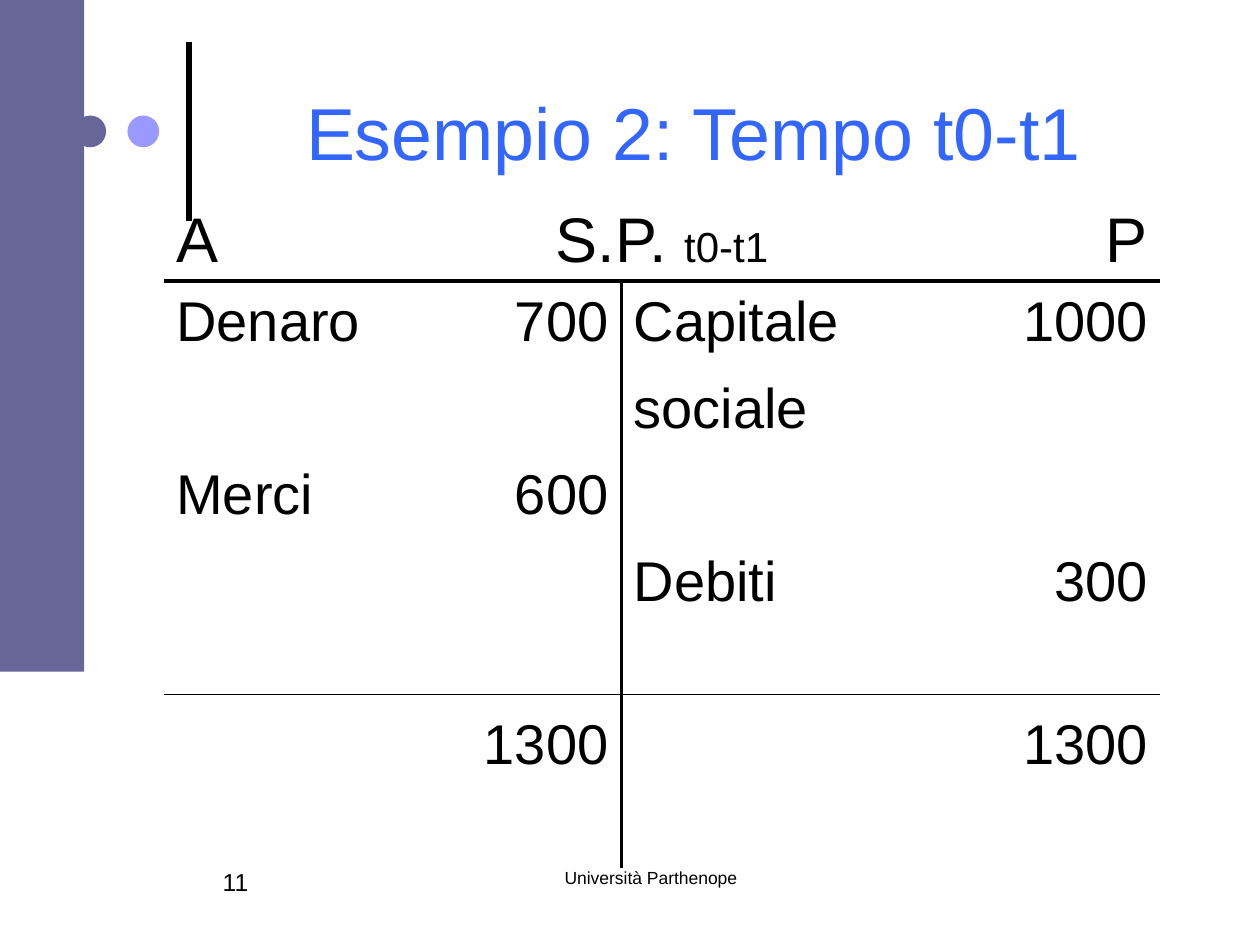
from lxml.etree import SubElement
from pptx import Presentation
from pptx.dml.color import RGBColor
from pptx.enum.shapes import MSO_CONNECTOR, MSO_SHAPE
from pptx.enum.text import MSO_ANCHOR, PP_ALIGN
from pptx.oxml.ns import qn
from pptx.util import Cm, Pt

COLUMNS = [5.03, 4.19, 5.84, 5.03]
ROWS = [1.65, 1.53, 1.75, 1.75, 1.75, 1.53, 1.75, 1.75]
ACCOUNTS = [
    ["A", "S.P. ", "", "P"],
    ["Denaro", "700", "Capitale", "1000"],
    ["", "", "sociale", ""],
    ["Merci", "600", "", ""],
    ["", "", "Debiti", "300"],
    ["", "", "", ""],
    ["", "1300", "", "1300"],
    ["", "", "", ""],
]
RULES = {0: 2, 5: 1}


def colour(value):
    """Turn a hex string into a colour."""
    return RGBColor.from_string(value)


def apply(target, formats):
    """Set every attribute named in the dict."""
    for name, value in formats.items():
        setattr(target, name, value)


def add_span(para, text, size, ink="000000"):
    """Add one formatted run to a paragraph."""
    span = para.add_run()
    span.text = text
    apply(span.font, {"name": "Arial", "size": Pt(size), "bold": False})
    span.font.color.rgb = colour(ink)


def add_text(page, box, text, size, ink="000000", align=PP_ALIGN.LEFT, anchor=MSO_ANCHOR.TOP):
    """Place a wrapped line of text in the box."""
    frame = page.shapes.add_textbox(*map(Cm, box)).text_frame
    apply(frame, {"word_wrap": True, "vertical_anchor": anchor})
    frame.paragraphs[0].alignment = align
    add_span(frame.paragraphs[0], text, size, ink)


def add_solid(page, kind, box, fill):
    """Place a plain filled shape without outline."""
    shape = page.shapes.add_shape(kind, *map(Cm, box))
    shape.shadow.inherit = False
    shape.fill.solid()
    shape.fill.fore_color.rgb = colour(fill)
    shape.line.fill.background()


def add_decoration(page, box):
    """Draw the upright line, the two dots and the side band."""
    left, top, width, height = box
    line_left = left + 3.81
    line = page.shapes.add_connector(
        MSO_CONNECTOR.STRAIGHT, Cm(line_left), Cm(top + 4.45), Cm(line_left), Cm(top + 0.84))
    line.line.width = Pt(3)
    line.line.color.rgb = colour("000000")
    SubElement(line._element.spPr, qn("a:effectLst"))
    for offset, fill in ((1.5, "666699"), (2.57, "9999FF")):
        add_solid(page, MSO_SHAPE.OVAL, (left + offset, top + 2.33, 0.64, 0.64), fill)
    add_solid(page, MSO_SHAPE.RECTANGLE, (left, top, width, height), "666699")


def set_borders(cell, widths):
    """Draw the given cell sides in black and clear the others."""
    properties = cell._tc.get_or_add_tcPr()
    for side in "LRTB":
        border = SubElement(properties, qn(f"a:ln{side}"))
        if side in widths:
            border.set("w", str(Pt(widths[side])))
            fill = SubElement(border, qn("a:solidFill"))
            SubElement(fill, qn("a:srgbClr")).set("val", "000000")
        else:
            SubElement(border, qn("a:noFill"))


def cell_borders(row, column):
    """Work out the ruled sides of a cell in the T account."""
    widths = {}
    if row in RULES:
        widths["B"] = RULES[row]
    if row - 1 in RULES:
        widths["T"] = RULES[row - 1]
    if row > 0 and column in (1, 2):
        widths["R" if column == 1 else "L"] = 2
    return widths


def add_account(page, box):
    """Build the T account table in the box."""
    table = page.shapes.add_table(len(ROWS), len(COLUMNS), *map(Cm, box)).table
    apply(table, {"first_row": False, "horz_banding": False})
    for column, width in zip(table.columns, COLUMNS):
        column.width = Cm(width)
    for row, height in zip(table.rows, ROWS):
        row.height = Cm(height)
    table.cell(0, 1).merge(table.cell(0, 2))
    for row, texts in enumerate(ACCOUNTS):
        for column, text in enumerate(texts):
            cell = table.cell(row, column)
            set_borders(cell, cell_borders(row, column))
            cell.fill.background()
            apply(cell, {"vertical_anchor": MSO_ANCHOR.BOTTOM,
                         "margin_top": Cm(0.1), "margin_bottom": Cm(0.1)})
            if text:
                para = cell.text_frame.paragraphs[0]
                para.alignment = PP_ALIGN.RIGHT if column % 2 else PP_ALIGN.LEFT
                add_span(para, text, 32 if row else 36)
    heading = table.cell(0, 1).text_frame.paragraphs[0]
    heading.alignment = PP_ALIGN.CENTER
    add_span(heading, "t0-t1", 24)


def add_footer(page, box):
    """Place the page number and the centred footer."""
    left, top, width, height = box
    add_text(page, (left + 4.86, top, width - 4.86, height), "Università Parthenope", 10,
             align=PP_ALIGN.CENTER)
    add_text(page, (left, top, 3.6, height), "11", 14)


def main():
    """Build and save the slide."""
    deck = Presentation()
    apply(deck, {"slide_width": Cm(25.4), "slide_height": Cm(19.05)})
    page = deck.slides.add_slide(deck.slide_layouts[6])
    add_decoration(page, (0, 0, 1.7, 13.54))
    add_footer(page, (4.24, 17.35, 12.9, 1.27))
    add_text(page, (4.24, 0.53, 19.48, 4.24), "Esempio 2: Tempo t0-t1", 42, "3366FF",
             PP_ALIGN.CENTER, MSO_ANCHOR.MIDDLE)
    add_account(page, (3.3, 3.94, sum(COLUMNS), sum(ROWS)))
    deck.save("out.pptx")


if __name__ == "__main__":
    main()
